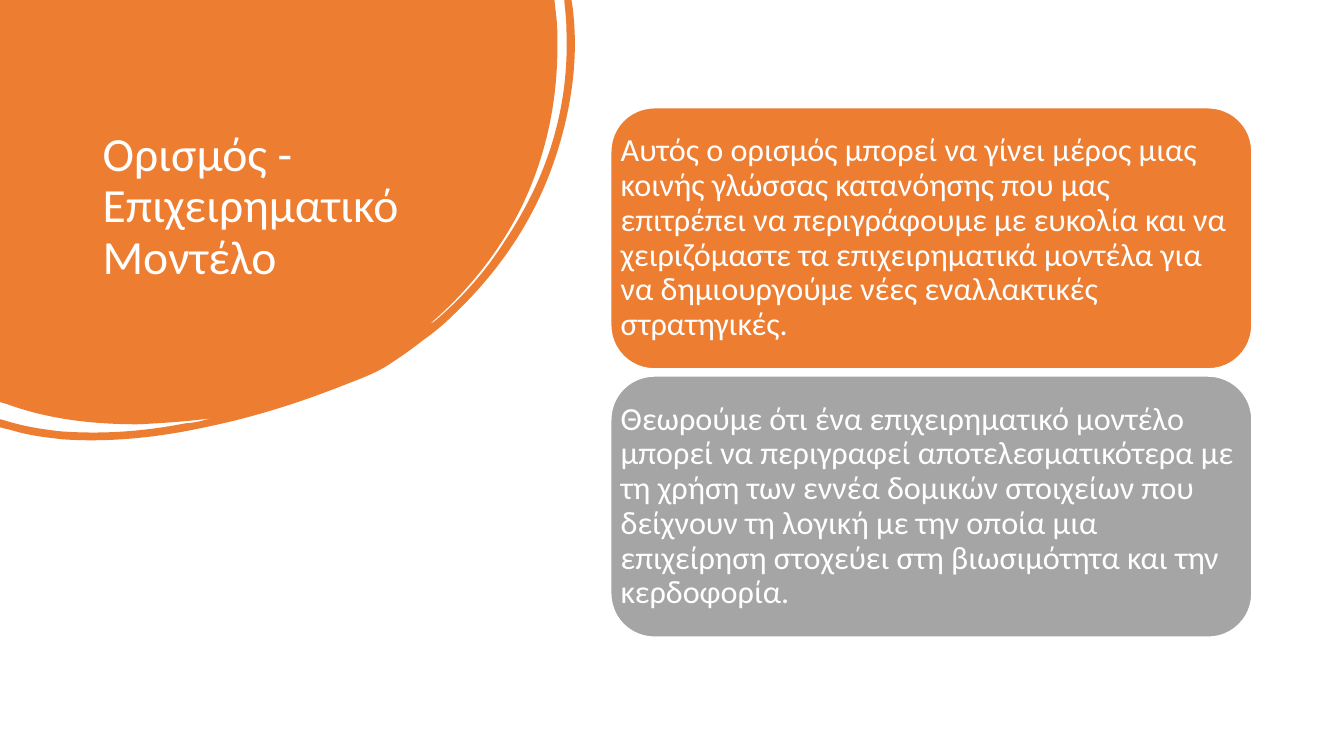
from dataclasses import dataclass

from lxml import etree
from pptx import Presentation
from pptx.dml.color import RGBColor
from pptx.enum.shapes import MSO_SHAPE
from pptx.enum.text import MSO_ANCHOR, PP_ALIGN
from pptx.oxml.ns import qn
from pptx.shapes.autoshape import Shape
from pptx.slide import Slide
from pptx.util import Pt

ROUND = MSO_SHAPE.ROUNDED_RECTANGLE
MIDDLE = MSO_ANCHOR.MIDDLE
BOTTOM = MSO_ANCHOR.BOTTOM
LEFT = PP_ALIGN.LEFT

FONT = "Calibri"
COLORS = {"orange": "ED7D31", "gray": "A5A5A5", "white": "FFFFFF"}
FINE = 100
BLOB_WIDTH, BLOB_HEIGHT = 411.1, 314.6

BLOB: list[tuple[float, ...]] = [
    (396, 0),
    (397.4, 12.2),
    (398.2, 18.7, 398.2, 25.9, 398.2, 32.4),
    (398.2, 72.7, 390.2, 110.9, 373, 146.9),
    (357.1, 179.3, 334.8, 207.4, 307.4, 231.1),
    (308.9, 231.1, 309.6, 229.7, 311, 229),
    (330.5, 212.4, 347, 193.7, 360.7, 172.1),
    (391, 126.7, 406.8, 77, 404.6, 21.6),
    (404.6, 15.1, 403.9, 8.6, 403.2, 2.2),
    (403.2, 0),
    (408.2, 0),
    (409, 5),
    (413.3, 38.9, 409, 73.4, 398.2, 108),
    (383.8, 154.1, 357.8, 193, 322.6, 226.1),
    (316.1, 232.6, 308.9, 238.3, 301.7, 243.4),
    (294.5, 249.1, 287.3, 254.2, 278.6, 259.9),
    (270, 265.7, 259.2, 270, 247.7, 274.3),
    (215.3, 287.3, 181.4, 298.1, 146.2, 305.3),
    (113, 312.5, 79.2, 316.1, 45.4, 313.9),
    (32.4, 312.5, 20.2, 311, 8.6, 307.4),
    (0, 305.3),
    (0, 299.5),
    (2.9, 300.2),
    (16.6, 304.6, 30.2, 306.7, 43.9, 308.2),
    (74.2, 310.3, 103, 308.2, 132.5, 302.4),
    (136.1, 302.4, 139, 301.7, 142.6, 301),
    (145.4, 300.2, 148.3, 299.5, 151.2, 298.8),
    (133.9, 301, 115.9, 302.4, 97.9, 303.1),
    (66.2, 303.1, 34.6, 299.5, 5, 288.7),
    (0, 287.3),
]


@dataclass
class Box:
    left: float
    top: float
    width: float
    height: float


@dataclass
class Card:
    text: str
    fill: str


CARDS = [
    Card("Αυτός ο ορισμός μπορεί να γίνει μέρος μιας κοινής γλώσσας κατανόησης "
         "που μας επιτρέπει να περιγράφουμε με ευκολία και να χειριζόμαστε τα "
         "επιχειρηματικά μοντέλα για να δημιουργούμε νέες εναλλακτικές "
         "στρατηγικές.", "orange"),
    Card("Θεωρούμε ότι ένα επιχειρηματικό μοντέλο μπορεί να περιγραφεί "
         "αποτελεσματικότερα με τη χρήση των εννέα δομικών στοιχείων που "
         "δείχνουν τη λογική με την οποία μια επιχείρηση στοχεύει στη "
         "βιωσιμότητα και την κερδοφορία.", "gray"),
]
TITLE = Box(66.2, 53.3, 253.4, 157)
CARD_TOP, CARD_STEP = 77, 191.6


def color(name: str) -> RGBColor:
    return RGBColor.from_string(COLORS[name])


def paint(shape: Shape, fill: str) -> None:
    shape.shadow.inherit = False
    shape.fill.solid()
    shape.fill.fore_color.rgb = color(fill)


def write(slide: Slide, box: Box, text: str, size: float,
          anchor: MSO_ANCHOR) -> None:
    area = slide.shapes.add_textbox(
        Pt(box.left), Pt(box.top), Pt(box.width), Pt(box.height))
    frame = area.text_frame
    frame.text = text
    frame.word_wrap = True
    frame.vertical_anchor = anchor
    frame.margin_left = frame.margin_right = Pt(7.2)
    frame.margin_top = frame.margin_bottom = Pt(7.2)
    line = frame.paragraphs[0]
    line.alignment = LEFT
    line.line_spacing = 0.9
    font = line.runs[0].font
    font.name = FONT
    font.size = Pt(size)
    font.color.rgb = color("white")


def curve(shape: Shape) -> None:
    shape.width, shape.height = Pt(BLOB_WIDTH), Pt(BLOB_HEIGHT)
    outline = next(shape.element.iter(qn("a:path")))
    outline.set("w", str(round(BLOB_WIDTH * FINE)))
    outline.set("h", str(round(BLOB_HEIGHT * FINE)))
    lines = iter(outline.findall(qn("a:lnTo")))
    for part in BLOB:
        group = [next(lines) for _ in range(len(part) // 2)]
        if len(group) == 3:
            bend = etree.Element(qn("a:cubicBezTo"))
            group[0].addprevious(bend)
            for line in group:
                bend.append(line[0])
                outline.remove(line)


def draw_blob(slide: Slide) -> None:
    points = [(part[i] * FINE, part[i + 1] * FINE)
              for part in BLOB for i in range(0, len(part), 2)]
    pen = slide.shapes.build_freeform(0, 0, scale=Pt(1) / FINE)
    pen.add_line_segments(points, close=True)
    blob = pen.convert_to_shape()
    curve(blob)
    paint(blob, "orange")
    blob.line.fill.background()


def draw_card(slide: Slide, card: Card, box: Box) -> None:
    shape = slide.shapes.add_shape(
        ROUND, Pt(box.left), Pt(box.top), Pt(box.width), Pt(box.height))
    paint(shape, card.fill)
    shape.line.color.rgb = color("white")
    shape.line.width = Pt(1)
    write(slide, box, card.text, 23, MIDDLE)


def main() -> None:
    deck = Presentation()
    deck.slide_width, deck.slide_height = Pt(960), Pt(540)
    slide = deck.slides.add_slide(deck.slide_layouts[6])
    draw_blob(slide)
    write(slide, TITLE, "Oρισμός - Επιχειρηματικό Μοντέλο", 34, BOTTOM)
    for index, card in enumerate(CARDS):
        top = CARD_TOP + index * CARD_STEP
        draw_card(slide, card, Box(436.3, top, 457.9, 186.5))
    deck.save("out.pptx")


if __name__ == "__main__":
    main()
